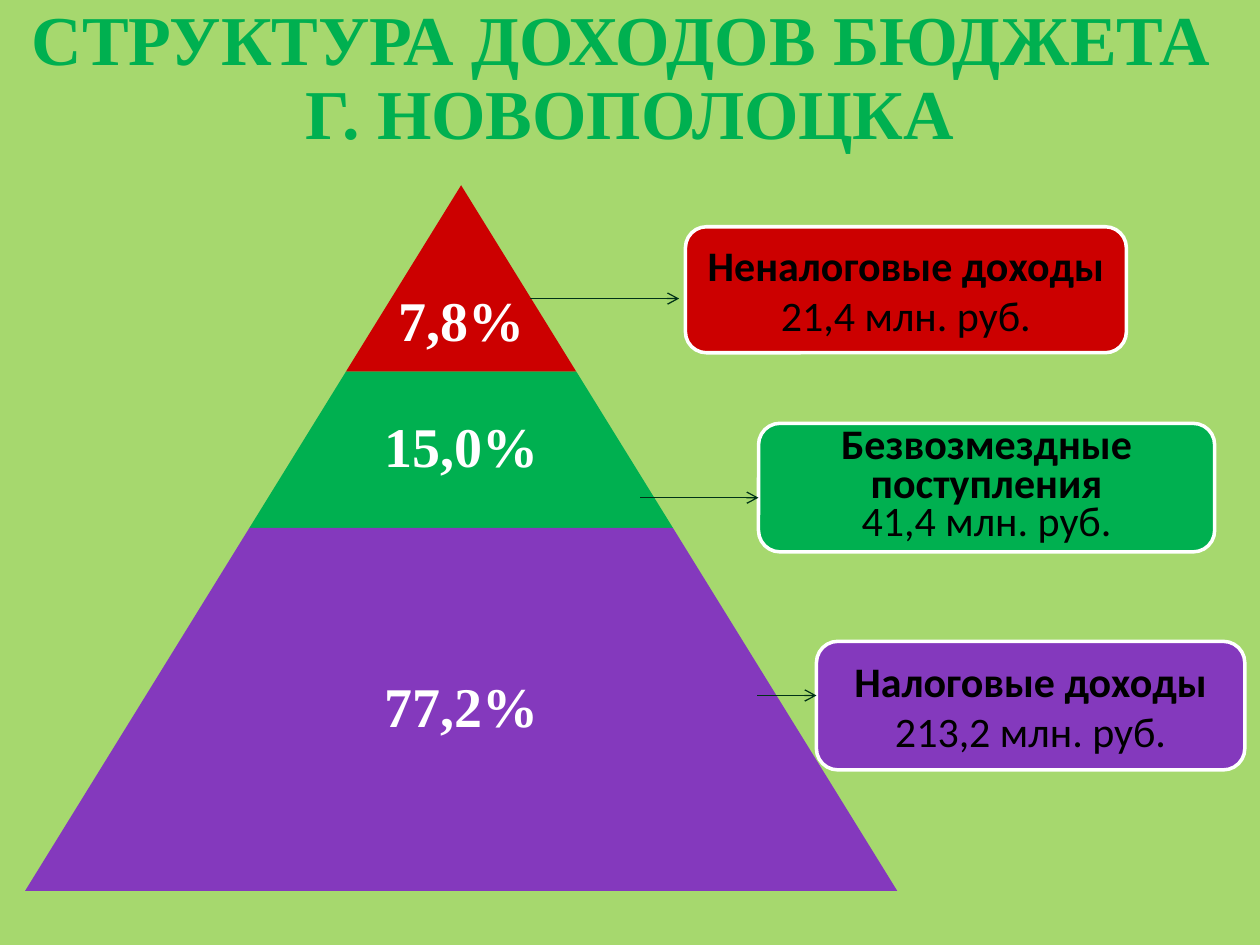
from dataclasses import dataclass

from lxml.etree import SubElement
from pptx import Presentation
from pptx.dml.color import RGBColor
from pptx.enum.shapes import MSO_CONNECTOR, MSO_SHAPE
from pptx.enum.text import MSO_ANCHOR, PP_ALIGN
from pptx.oxml.ns import qn
from pptx.util import Inches, Pt


@dataclass(frozen=True)
class Theme:
    background: str = "A6D86E"
    green: str = "00B050"
    red: str = "CC0000"
    purple: str = "8439BD"
    white: str = "FFFFFF"
    black: str = "000000"
    arrow: str = "003217"
    serif: str = "Times New Roman"
    sans: str = "Calibri"
    title_size: int = 40
    share_size: int = 32
    callout_size: int = 24


THEME = Theme()
APEX_X, APEX_Y = 3.66, 1.47
SLOPE = 0.618  # half-width gained per inch of depth

# bottom edge, colour, share, text box width as part of the tier, top inset
TIERS = [
    (2.95, THEME.red, "7,8%", 1, 0.75),
    (4.19, THEME.green, "15,0%", 0.65, 0.04),
    (7.07, THEME.purple, "77,2%", 0.65, 0.04),
]
# box, colour, income kind, amount, line spacing, arrow (from x, to x, y)
CALLOUTS = [
    ((5.44, 1.8, 3.5, 1), THEME.red, "Неналоговые доходы",
     "21,4 млн. руб.", None, (4.21, 5.39, 2.37)),
    ((6.02, 3.36, 3.62, 1.02), THEME.green, "Безвозмездные поступления",
     "41,4 млн. руб.", Pt(22), (5.08, 6.02, 3.95)),
    ((6.48, 5.09, 3.4, 1.02), THEME.purple, "Налоговые доходы",
     "213,2 млн. руб.", None, (6.01, 6.48, 5.52)),
]


def rgb(value):
    return RGBColor.from_string(value)


def add_run(paragraph, text, font_name, size, color, bold=True):
    run = paragraph.add_run()
    run.text = text
    run.font.name = font_name
    run.font.size = Pt(size)
    run.font.bold = bold
    run.font.color.rgb = rgb(color)


def set_centered(frame):
    frame.word_wrap = True
    frame.vertical_anchor = MSO_ANCHOR.MIDDLE
    frame.paragraphs[0].alignment = PP_ALIGN.CENTER


def add_filled(slide, preset, box, color):
    shape = slide.shapes.add_shape(preset, *map(Inches, box))
    shape.shadow.inherit = False
    shape.fill.solid()
    shape.fill.fore_color.rgb = rgb(color)
    shape.line.fill.background()
    return shape


def add_title(slide):
    title = slide.shapes.add_textbox(*map(Inches, (0, 0.05, 10, 1.17)))
    set_centered(title.text_frame)
    heading = title.text_frame.paragraphs[0]
    heading.line_spacing = Pt(42)
    style = (THEME.serif, THEME.title_size, THEME.green)
    add_run(heading, "СТРУКТУРА ДОХОДОВ БЮДЖЕТА ", *style)
    heading.add_line_break()
    add_run(heading, "Г. НОВОПОЛОЦКА", *style)


def add_tier(slide, top, bottom, color, share, text_part, top_inset):
    height = bottom - top
    width = 2 * SLOPE * (bottom - APEX_Y)
    tier = add_filled(slide, MSO_SHAPE.TRAPEZOID,
                      (APEX_X - width / 2, top, width, height), color)
    tier.adjustments[0] = SLOPE

    text_width = width * text_part
    label = slide.shapes.add_textbox(Inches(APEX_X - text_width / 2), Inches(top),
                                     Inches(text_width), Inches(height))
    frame = label.text_frame
    set_centered(frame)
    frame.margin_left = frame.margin_right = frame.margin_bottom = Inches(0.04)
    frame.margin_top = Inches(top_inset)
    frame.paragraphs[0].line_spacing = 0.9
    add_run(frame.paragraphs[0], share, THEME.serif, THEME.share_size, THEME.white)


def add_callout(slide, box, color, income, amount, spacing):
    callout = add_filled(slide, MSO_SHAPE.ROUNDED_RECTANGLE, box, color)
    callout.line.color.rgb = rgb(THEME.white)
    callout.line.width = Pt(2)
    frame = callout.text_frame
    set_centered(frame)
    lines = (frame.paragraphs[0], income, True), (frame.add_paragraph(), amount, False)
    for paragraph, text, bold in lines:
        paragraph.alignment = PP_ALIGN.CENTER
        paragraph.line_spacing = spacing
        add_run(paragraph, text, THEME.sans, THEME.callout_size, THEME.black, bold)


def add_arrow(slide, start_x, end_x, y):
    arrow = slide.shapes.add_connector(
        MSO_CONNECTOR.STRAIGHT, Inches(start_x), Inches(y), Inches(end_x), Inches(y))
    arrow.line.color.rgb = rgb(THEME.arrow)
    arrow.line.width = Pt(0.75)
    SubElement(arrow.line._get_or_add_ln(), qn("a:tailEnd"), type="arrow")
    SubElement(arrow._element.spPr, qn("a:effectLst"))


def main():
    deck = Presentation()
    deck.slide_width, deck.slide_height = Inches(10), Inches(7.5)
    slide = deck.slides.add_slide(deck.slide_layouts[6])
    slide.background.fill.solid()
    slide.background.fill.fore_color.rgb = rgb(THEME.background)

    add_title(slide)
    top = APEX_Y
    for bottom, *tier in TIERS:
        add_tier(slide, top, bottom, *tier)
        top = bottom
    for *callout, arrow in CALLOUTS:
        add_callout(slide, *callout)
        add_arrow(slide, *arrow)
    deck.save("out.pptx")


if __name__ == "__main__":
    main()
